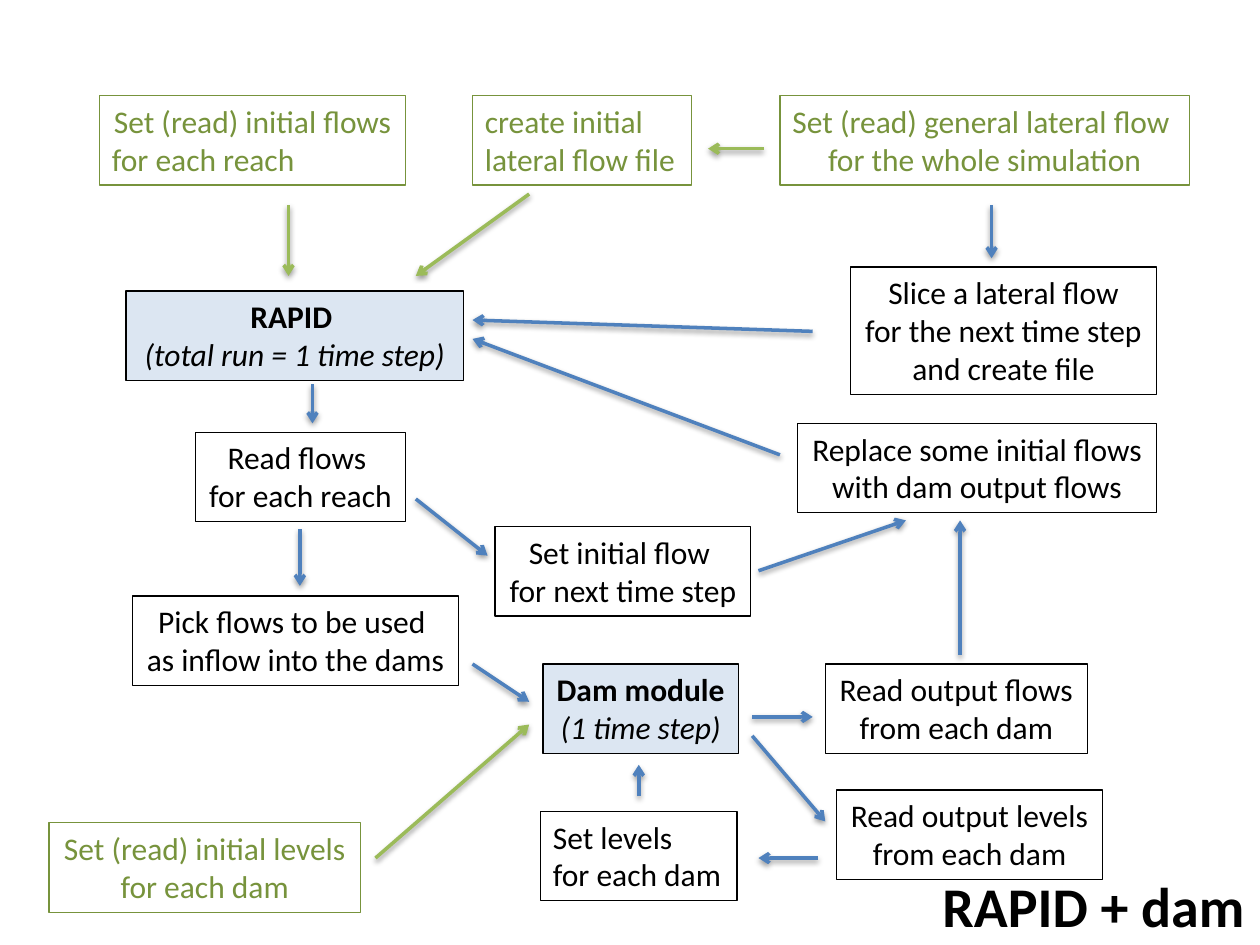
from lxml.etree import SubElement
from pptx import Presentation
from pptx.dml.color import RGBColor
from pptx.enum.shapes import MSO_CONNECTOR
from pptx.enum.text import MSO_ANCHOR, MSO_AUTO_SIZE, PP_ALIGN
from pptx.oxml import parse_xml
from pptx.oxml.ns import nsdecls, qn
from pptx.util import Inches, Pt

BLACK, OLIVE, PALE = "000000", "77933C", "DCE6F2"
BLUE, GREEN = "4F81BD", "9BBB59"
ALIGN = {"c": PP_ALIGN.CENTER, "l": PP_ALIGN.LEFT}
SHADOW = (
    f'<a:effectLst {nsdecls("a")}>'
    '<a:outerShdw blurRad="40000" dist="20000" dir="5400000" rotWithShape="0">'
    '<a:srgbClr val="000000"><a:alpha val="38000"/></a:srgbClr>'
    '</a:outerShdw></a:effectLst>'
)


def paint(color, value):
    color.rgb = RGBColor.from_string(value)


def write(par, text, size, color, bold=False, slant=False):
    run = par.add_run()
    run.text = text
    font = run.font
    font.name, font.size = "Calibri", Pt(size)
    font.bold, font.italic = bold, slant
    paint(font.color, color)


prs = Presentation()
prs.slide_width, prs.slide_height = Inches(10), Inches(7.5)
slide = prs.slides.add_slide(prs.slide_layouts[5])

# Title in the lower right corner
title = slide.shapes.title
title.left, title.top = Inches(7.38), Inches(6.87)
title.width, title.height = Inches(2.62), Inches(0.64)
frame = title.text_frame
frame.word_wrap = False
frame.auto_size = MSO_AUTO_SIZE.SHAPE_TO_FIT_TEXT
frame.vertical_anchor = MSO_ANCHOR.TOP
frame.paragraphs[0].alignment = PP_ALIGN.LEFT
write(frame.paragraphs[0], "RAPID + dam", 32, BLACK, bold=True)

# Boxes: left, top, width, colour, alignment of each line, lines
boxes = [
    (0.79, 0.76, 2.43, OLIVE, "cl", ["Set (read) initial flows ", "for each reach"]),
    (3.75, 0.76, 1.74, OLIVE, "ll", ["create initial", "lateral flow file"]),
    (6.19, 0.76, 3.25, OLIVE, "cc",
     ["Set (read) general lateral flow ", "for the whole simulation"]),
    (6.75, 2.12, 2.43, BLACK, "ccc",
     ["Slice a lateral flow", "for the next time step", "and create file"]),
    (6.33, 3.36, 2.85, BLACK, "cc",
     ["Replace some initial flows ", "with dam output flows"]),
    (1.55, 3.43, 1.67, BLACK, "cc", ["Read flows ", "for each reach"]),
    (3.93, 4.18, 2.03, BLACK, "cc", ["Set initial flow ", "for next time step"]),
    (1.05, 4.73, 2.59, BLACK, "cc",
     ["Pick flows to be used ", "as inflow into the dams"]),
    (6.55, 5.27, 2.08, BLACK, "cc", ["Read output flows", "from each dam"]),
    (6.64, 6.27, 2.11, BLACK, "cc", ["Read output levels", "from each dam"]),
    (4.29, 6.44, 1.56, BLACK, "ll", ["Set levels", "for each dam"]),
    (0.39, 6.53, 2.47, OLIVE, "cc", ["Set (read) initial levels ", "for each dam"]),
    # The two models
    (1, 2.31, 2.68, PALE, "cc", ["RAPID ", "(total run = 1 time step)"]),
    (4.31, 5.27, 1.55, PALE, "cc", ["Dam module", "(1 time step)"]),
]
for left, top, width, color, sides, lines in boxes:
    model = color == PALE
    ink = BLACK if model else color
    height = 0.11 + 0.3 * len(lines)
    box = slide.shapes.add_textbox(
        Inches(left), Inches(top), Inches(width), Inches(height))
    if model:
        box.fill.solid()
        paint(box.fill.fore_color, PALE)
    box.line.width = Pt(0.75)
    paint(box.line.color, ink)
    frame = box.text_frame
    frame.word_wrap = False
    frame.auto_size = MSO_AUTO_SIZE.SHAPE_TO_FIT_TEXT
    for row, (side, text) in enumerate(zip(sides, lines)):
        par = frame.add_paragraph() if row else frame.paragraphs[0]
        par.alignment = ALIGN[side]
        write(par, text, 18, ink, model and row == 0, model and row == 1)

# Arrows: start x and y, end x and y
flows = {
    GREEN: [
        (2.29, 1.63, 2.29, 2.19), (2.98, 6.81, 4.2, 5.75),
        (6.06, 1.18, 5.62, 1.18), (4.2, 1.54, 3.3, 2.19),
    ],
    BLUE: [
        (2.48, 3.05, 2.48, 3.36), (3.3, 3.96, 3.87, 4.41),
        (2.38, 4.2, 2.38, 4.65), (3.75, 5.27, 4.2, 5.57),
        (5.97, 5.69, 6.45, 5.69), (6.02, 4.53, 7.19, 4.13),
        (5.97, 5.84, 6.55, 6.52), (6.49, 6.81, 6.02, 6.81),
        (5.07, 6.32, 5.07, 6.07), (7.62, 5.2, 7.62, 4.13),
        (7.87, 1.63, 7.87, 2.05), (6.19, 3.61, 3.75, 2.69),
        (6.45, 2.63, 3.75, 2.54),
    ],
}
for color, ends in flows.items():
    for points in ends:
        arrow = slide.shapes.add_connector(
            MSO_CONNECTOR.STRAIGHT, *map(Inches, points))
        arrow.line.width = Pt(2)
        paint(arrow.line.color, color)
        props = arrow._element.spPr
        SubElement(props.find(qn("a:ln")), qn("a:tailEnd"), type="arrow")
        props.append(parse_xml(SHADOW))

prs.save("out.pptx")
